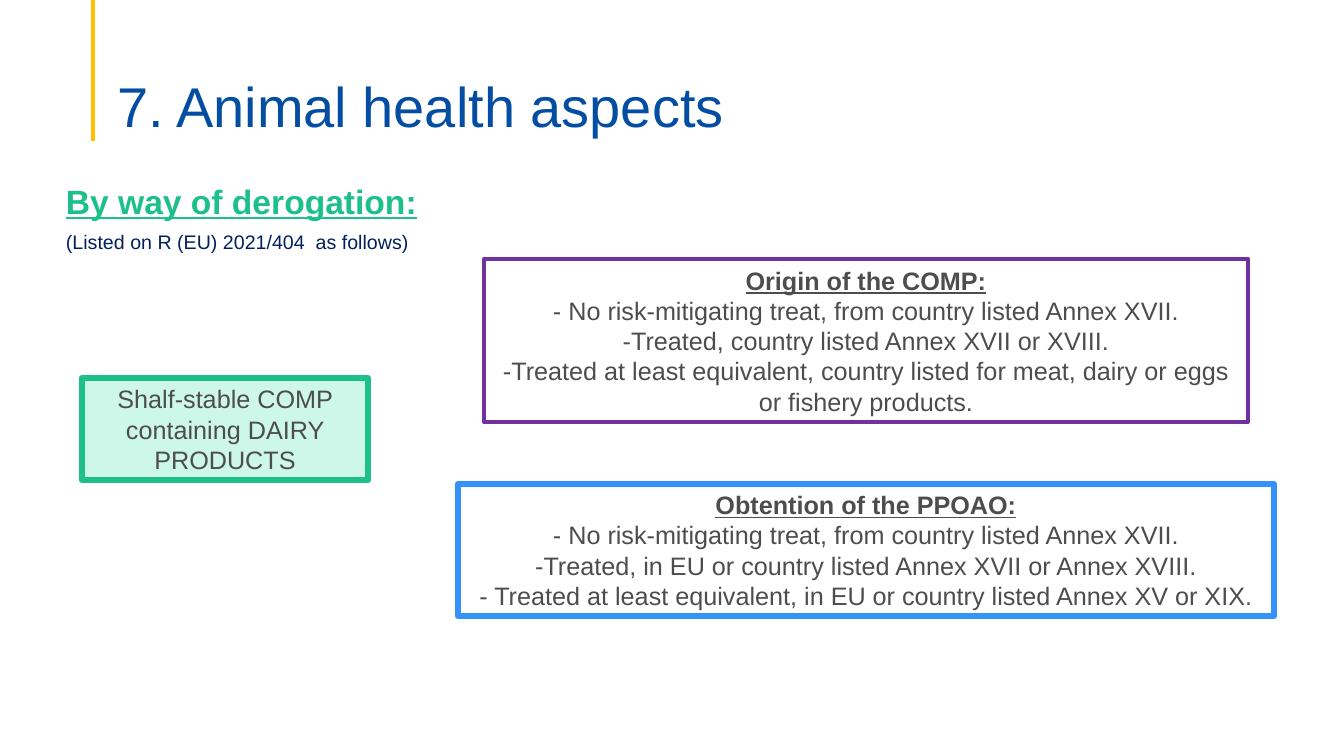
"""Build the slide on animal health aspects."""
from lxml.etree import SubElement
from pptx import Presentation
from pptx.dml.color import RGBColor
from pptx.enum.shapes import MSO_CONNECTOR, MSO_SHAPE
from pptx.enum.text import MSO_ANCHOR, MSO_AUTO_SIZE, PP_ALIGN
from pptx.oxml.ns import qn
from pptx.util import Pt

COLORS = {
    "title": "034EA2", "rule": "FFC000", "green": "1EC08A", "mint": "CDF7E9",
    "navy": "002060", "grey": "4D4D4D", "purple": "7030A0", "blue": "3492FB",
}
TITLE = "7. Animal health aspects"
TITLE_AT = (107, 53, 1159, 87)
RULE_AT = (93, 0, 93, 141)
HEADING = {"bold": True, "underline": True}
INTRO_AT = (56, 176, 403, 83)
INTRO = [
    ("By way of derogation:", {"size": 24, "color": "green", **HEADING}),
    ("(Listed on R (EU) 2021/404  as follows)", {"size": 14, "color": "navy"}),
]
BOXES = [
    {"at": (82, 378, 286, 102), "fill": "mint", "line": "green", "width": 4.5,
     "heading": None, "lines": ["Shalf-stable COMP containing DAIRY PRODUCTS"]},
    {"at": (484, 259, 764, 163), "fill": None, "line": "purple", "width": 3,
     "heading": "Origin of the COMP:",
     "lines": [
         "- No risk-mitigating treat, from country listed Annex XVII.",
         "-Treated, country listed Annex XVII or XVIII.",
         "-Treated at least equivalent, country listed for meat, dairy or eggs or fishery products.",
     ]},
    {"at": (458, 484, 816, 132), "fill": None, "line": "blue", "width": 4.5,
     "heading": "Obtention of the PPOAO:",
     "lines": [
         "- No risk-mitigating treat, from country listed Annex XVII.",
         "-Treated, in EU or country listed Annex XVII or Annex XVIII.",
         "- Treated at least equivalent, in EU or country listed Annex XV or XIX.",
     ]},
]


def px(values):
    return [round(v * 914400 / 100.8) for v in values]


def rgb(name):
    return RGBColor.from_string(COLORS[name])


def write(tf, rows, align=PP_ALIGN.LEFT, gap=0):
    tf.word_wrap = True
    for i, (text, look) in enumerate(rows):
        p = tf.add_paragraph() if i else tf.paragraphs[0]
        p.alignment = align
        if i and gap:
            p.space_before = Pt(gap)
        r = p.add_run()
        r.text = text
        r.font.color.rgb = rgb(look["color"])
        font = {"name": "Arial", "bold": False, "underline": False, **look}
        font["size"] = Pt(look["size"])
        del font["color"]
        for name, value in font.items():
            setattr(r.font, name, value)


def add_title(s):
    sp = s.shapes.title
    sp.left, sp.top, sp.width, sp.height = px(TITLE_AT)
    tf = sp.text_frame
    tf.auto_size = MSO_AUTO_SIZE.NONE
    tf.vertical_anchor = MSO_ANCHOR.BOTTOM
    tf.margin_bottom = 0
    write(tf, [(TITLE, {"size": 40, "color": "title"})])
    tf.paragraphs[0].line_spacing = 0.9


def add_rule(s):
    c = s.shapes.add_connector(MSO_CONNECTOR.STRAIGHT, *px(RULE_AT))
    c.line.color.rgb = rgb("rule")
    c.line.width = Pt(2.25)
    SubElement(c._element.spPr, qn("a:effectLst"))


def add_box(s, box):
    sp = s.shapes.add_shape(MSO_SHAPE.RECTANGLE, *px(box["at"]))
    sp.shadow.inherit = False
    if box["fill"]:
        sp.fill.solid()
        sp.fill.fore_color.rgb = rgb(box["fill"])
    else:
        sp.fill.background()
    sp.line.color.rgb = rgb(box["line"])
    sp.line.width = Pt(box["width"])
    look = {"size": 18, "color": "grey"}
    rows = [(text, look) for text in box["lines"]]
    if box["heading"]:
        rows.insert(0, (box["heading"], {**look, **HEADING}))
    write(sp.text_frame, rows, PP_ALIGN.CENTER)
    sp.text_frame.auto_size = MSO_AUTO_SIZE.SHAPE_TO_FIT_TEXT


def main():
    prs = Presentation()
    prs.slide_width, prs.slide_height = px((1344, 756))
    s = prs.slides.add_slide(prs.slide_layouts[5])
    add_rule(s)
    add_title(s)
    intro = s.shapes.add_textbox(*px(INTRO_AT))
    write(intro.text_frame, INTRO, gap=6)
    for box in BOXES:
        add_box(s, box)
    prs.save("out.pptx")


if __name__ == "__main__":
    main()
